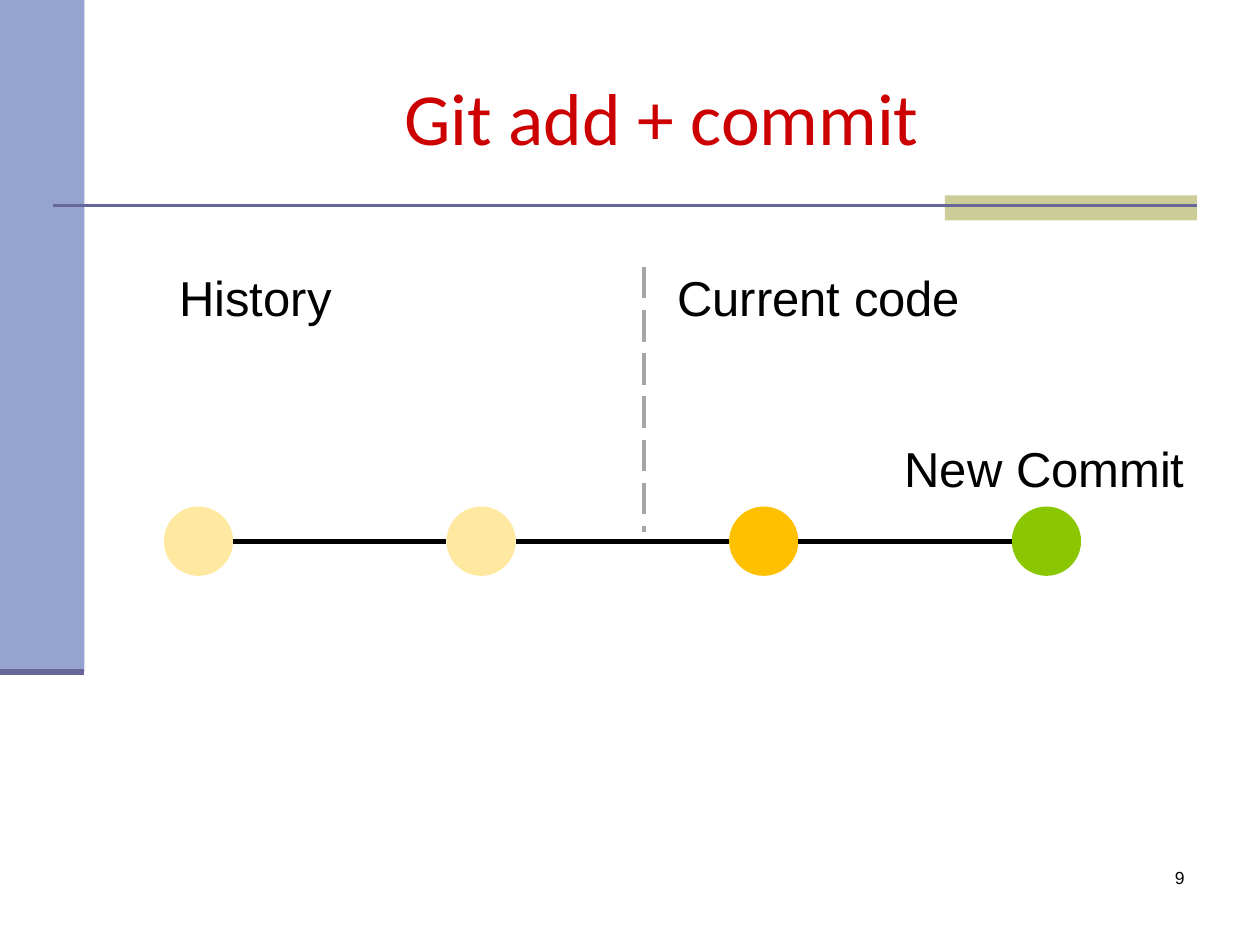
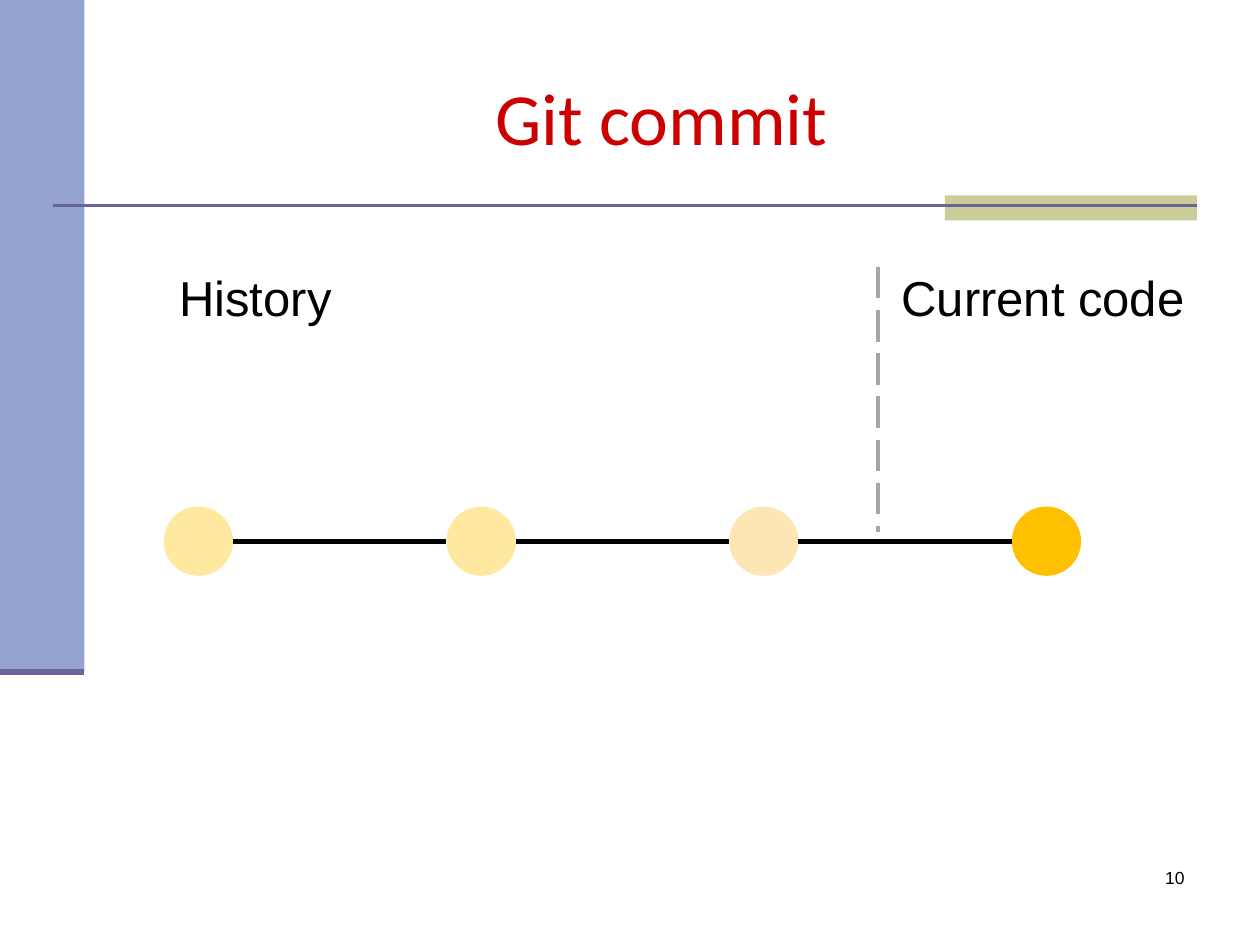
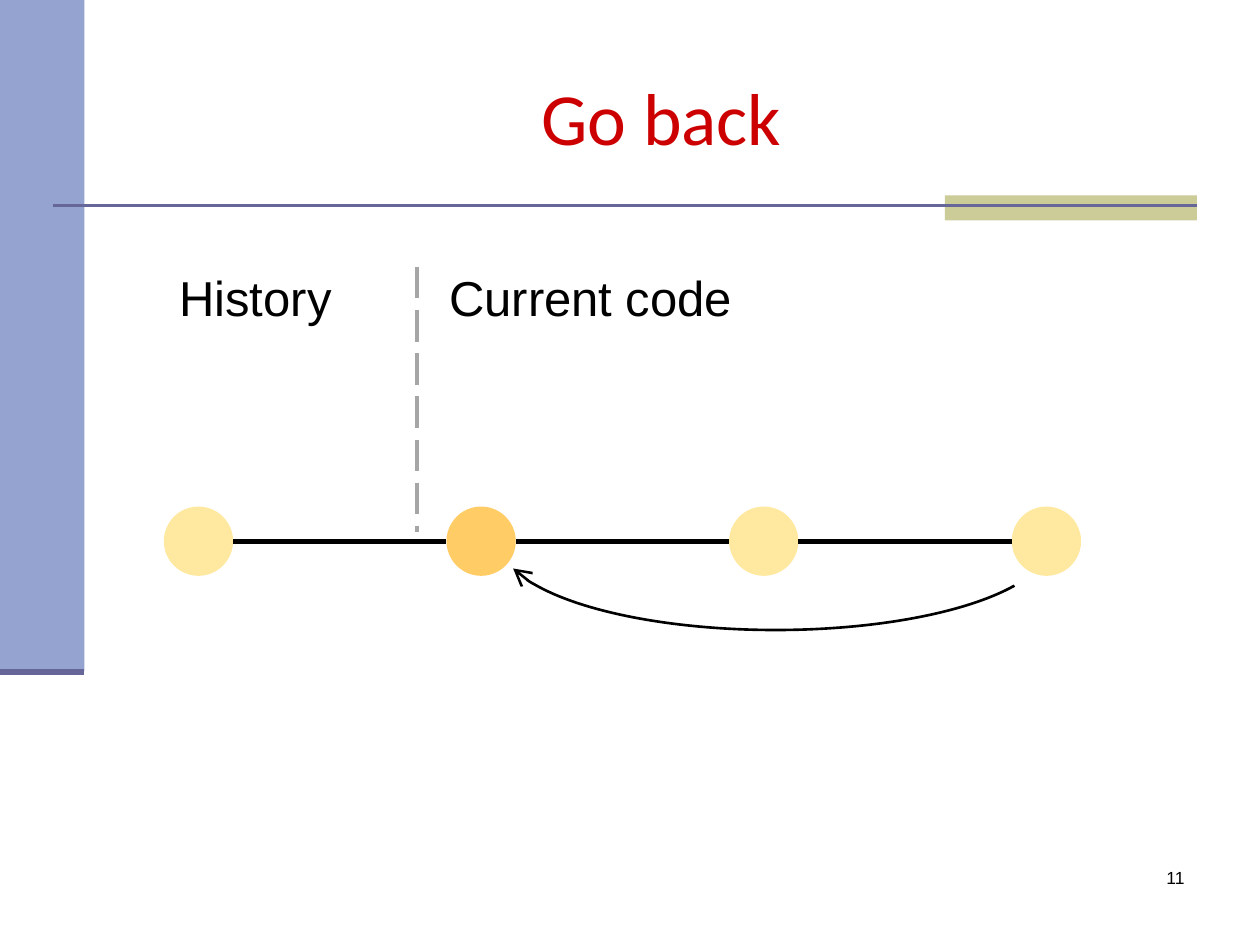
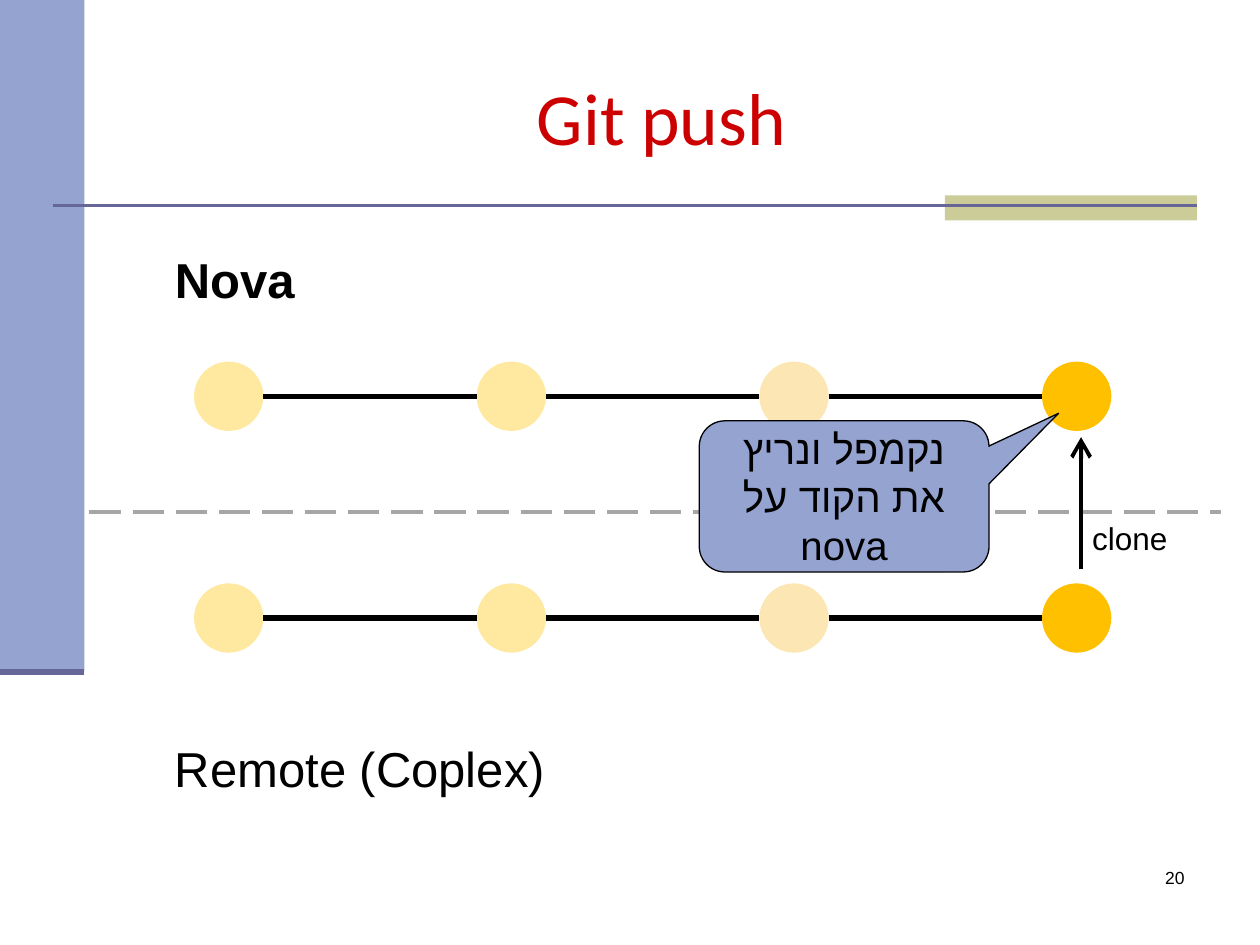
import collections
import itertools

import pptx
import pptx.dml.color
import pptx.enum.dml
import pptx.enum.shapes
import pptx.enum.text
import pptx.oxml.ns
import pptx.util

SHAPE = pptx.enum.shapes.MSO_SHAPE
ALIGN = pptx.enum.text.PP_ALIGN
ANCHOR = pptx.enum.text.MSO_ANCHOR

# The slide is a grid of 10 columns by 7.5 rows
SLIDE_W, SLIDE_H = pptx.util.Inches(10), pptx.util.Inches(7.5)
COL, ROW = SLIDE_W / 10, SLIDE_H / 7.5
Box = collections.namedtuple("Box", "x y w h")

BLACK, RED, GREY = "000000", "CC0000", "A6A6A6"
BLUE, SLATE, OLIVE = "95A3D1", "666699", "CCCC99"
PALE, CREAM, PEACH, AMBER, GREEN = "FFE89F", "FCE7B4", "FFCC66", "FFC000", "8AC701"

TITLE_BOX = Box(1, 0.3, 8.5, 1.25)
NUMBER_BOX = Box(7.42, 6.83, 2.08, 0.5)
TIMELINE_BOX = Box(1.3, 2.07, 7.28, 2.5)
PUSH_BOX = Box(1.29, 1.93, 8.4, 4.33)
NODE, STEP = 0.55, 6.73 / 3  # node diameter; four nodes span three steps
LABEL_H = 0.45


def rgb(value):
    return pptx.dml.color.RGBColor.from_string(value)


def place(shape, box):
    shape.left, shape.top = int(box.x * COL), int(box.y * ROW)
    shape.width, shape.height = int(box.w * COL), int(box.h * ROW)


def add_shape(slide, kind, box, fill=None, line=None, weight=1):
    sp = slide.shapes.add_shape(kind, 0, 0, 0, 0)
    place(sp, box)
    sp.shadow.inherit = False
    if fill:
        sp.fill.solid()
        sp.fill.fore_color.rgb = rgb(fill)
    else:
        sp.fill.background()
    if line:
        sp.line.color.rgb = rgb(line)
        sp.line.width = pptx.util.Pt(weight)
    else:
        sp.line.fill.background()
    return sp


def add_line(slide, x1, y1, x2, y2, color=BLACK, weight=3.0, dashed=False):
    ln = slide.shapes.add_connector(
        pptx.enum.shapes.MSO_CONNECTOR.STRAIGHT,
        int(x1 * COL), int(y1 * ROW), int(x2 * COL), int(y2 * ROW))
    ln.line.color.rgb = rgb(color)
    ln.line.width = pptx.util.Pt(weight)
    if dashed:
        ln.line.dash_style = pptx.enum.dml.MSO_LINE.LONG_DASH
    sppr = ln._element.spPr
    sppr.append(sppr.makeelement(pptx.oxml.ns.qn("a:effectLst"), {}))
    return ln


def add_arrowhead(shape):
    ln = shape.line._get_or_add_ln()
    ln.append(ln.makeelement(pptx.oxml.ns.qn("a:tailEnd"),
                             {"type": "arrow", "w": "lg", "len": "lg"}))


def write(shape, text, size=28, align=ALIGN.RIGHT, anchor=ANCHOR.TOP,
          font="Arial", color=BLACK, bold=False, rtl=False):
    tf = shape.text_frame
    tf.word_wrap = True
    tf.auto_size = pptx.enum.text.MSO_AUTO_SIZE.NONE
    tf.vertical_anchor = anchor
    p = tf.paragraphs[0]
    p.alignment = align
    p.space_before = pptx.util.Pt(0)
    ppr = p._p.get_or_add_pPr()
    if rtl:
        ppr.set("rtl", "1")
    if shape.is_placeholder:
        ppr.set("marL", "0")
        ppr.set("indent", "0")
        ppr.append(ppr.makeelement(pptx.oxml.ns.qn("a:buNone"), {}))
    r = p.add_run()
    r.text = text
    r.font.name, r.font.size, r.font.bold = font, pptx.util.Pt(size), bold
    r.font.color.rgb = rgb(color)
    rpr = r._r.get_or_add_rPr()
    rpr.append(rpr.makeelement(pptx.oxml.ns.qn("a:cs"), {"typeface": font}))


def add_text(slide, box, text, **style):
    sp = slide.shapes.add_textbox(0, 0, 0, 0)
    place(sp, box)
    write(sp, text, **style)


def decorate_master(prs, slide):
    """Draw the bands and rules once, then move them to the master."""
    parts = [
        add_shape(slide, SHAPE.RECTANGLE, Box(0, 0, 0.67, 5.33), BLUE),
        add_shape(slide, SHAPE.RECTANGLE, Box(7.5, 1.55, 2, 0.2), OLIVE),
        add_line(slide, 0.42, 1.63, 9.5, 1.63, SLATE, 1.5),
        add_line(slide, 0, 5.33, 0.67, 5.33, SLATE, 3.5),
    ]
    tree = prs.slide_master.shapes._spTree
    for i, part in enumerate(parts):
        part._element.xpath(".//p:cNvPr")[0].set("id", str(100 + i))
        tree.insert(2 + i, part._element)


def new_slide(prs, layout, title, number):
    slide = prs.slides.add_slide(prs.slide_layouts.get_by_name(layout))
    place(slide.shapes.title, TITLE_BOX)
    write(slide.shapes.title, title, size=42, align=ALIGN.CENTER,
          anchor=ANCHOR.MIDDLE, font="Calibri", color=RED)
    add_text(slide, NUMBER_BOX, str(number), size=10)
    return slide


def add_commits(slide, x, y, colors):
    """A row of commits, each joined to the next."""
    lefts = [x + i * STEP for i in range(len(colors))]
    for left, color in zip(lefts, colors):
        add_shape(slide, SHAPE.OVAL, Box(left, y, NODE, NODE), color)
    mid = y + NODE / 2
    for left, following in itertools.pairwise(lefts):
        add_line(slide, left + NODE, mid, following, mid)


def timeline_slide(prs, title, number, colors, divider, code_x, box=TIMELINE_BOX):
    slide = new_slide(prs, "Title and Content", title, number)
    add_commits(slide, box.x, box.y + box.h - NODE, colors)
    # Divider between the history and the current code
    x = box.x + divider
    add_line(slide, x, box.y + 0.05, x, box.y + 2.15, GREY, 2.25, dashed=True)
    add_text(slide, Box(box.x - 0.43, box.y, 1.86, LABEL_H), "History", rtl=True)
    body = slide.placeholders[1]
    place(body, Box(box.x + code_x, box.y, 2.6, LABEL_H))
    write(body, "Current code", rtl=True)
    return slide


def add_new_commit_label(slide, box=TIMELINE_BOX):
    add_text(slide, Box(box.x + 5.73, box.y + 1.36, 2.47, LABEL_H),
             "New Commit", rtl=True)


def add_return_arrow(slide, box=TIMELINE_BOX):
    """An arc below the row, from the last commit back to the second."""
    arc = add_shape(slide, SHAPE.ARC, Box(box.x + 2.67, box.y + 1.53, 4.37, 1.4),
                    line=BLACK, weight=1.5)
    arc.rotation = 180
    for i, degrees in enumerate((190.4, 354.2)):
        arc.adjustments[i] = degrees * 0.6  # 60000 units a degree, over 100000
    add_arrowhead(arc)


def push_slide(prs, title, number, box=PUSH_BOX):
    slide = new_slide(prs, "Title Only", title, number)
    middle = box.y + 2.13
    add_line(slide, box.x - 0.58, middle, box.x + box.w, middle, GREY, 2.25, dashed=True)
    # Names of the two repositories
    label = Box(box.x, box.y, 3.57, LABEL_H)
    add_text(slide, label, "Nova", align=ALIGN.LEFT, bold=True, rtl=True)
    add_text(slide, label._replace(y=box.y + box.h - LABEL_H), "Remote (Coplex)",
             align=ALIGN.LEFT, rtl=True)
    # Local and remote commits
    for y in (0.94, 2.7):
        add_commits(slide, box.x + 0.25, box.y + y, [PALE, PALE, CREAM, AMBER])
    # Clone arrow
    x = box.x + 7.29
    add_arrowhead(add_line(slide, x, middle + 0.46, x, middle - 0.59, weight=2.25))
    add_text(slide, Box(x - 0.01, middle + 0.01, 0.84, 0.4), "clone",
             size=18, align=ALIGN.LEFT)
    # Callout on the latest local commit
    callout = add_shape(slide, SHAPE.ROUNDED_RECTANGULAR_CALLOUT,
                        Box(box.x + 4.26, box.y + 1.41, 2.3, 1.2), BLUE, BLACK, 0.75)
    for i, value in enumerate((0.74, -0.55, 0.17)):
        callout.adjustments[i] = value
    write(callout, "נקמפל ונריץ את הקוד על nova", size=23, align=ALIGN.CENTER,
          anchor=ANCHOR.MIDDLE, rtl=True)


def main():
    prs = pptx.Presentation()
    prs.slide_width, prs.slide_height = SLIDE_W, SLIDE_H

    slide = timeline_slide(prs, "Git add + commit", 9,
                           [PALE, PALE, AMBER, GREEN], divider=3.81, code_x=3.82)
    decorate_master(prs, slide)
    add_new_commit_label(slide)
    timeline_slide(prs, "Git commit", 10,
                   [PALE, PALE, CREAM, AMBER], divider=5.67, code_x=5.6)
    slide = timeline_slide(prs, "Go back", 11,
                           [PALE, PEACH, PALE, PALE], divider=2.01, code_x=2.01)
    add_return_arrow(slide)
    push_slide(prs, "Git push", 20)
    prs.save("out.pptx")


if __name__ == "__main__":
    main()
